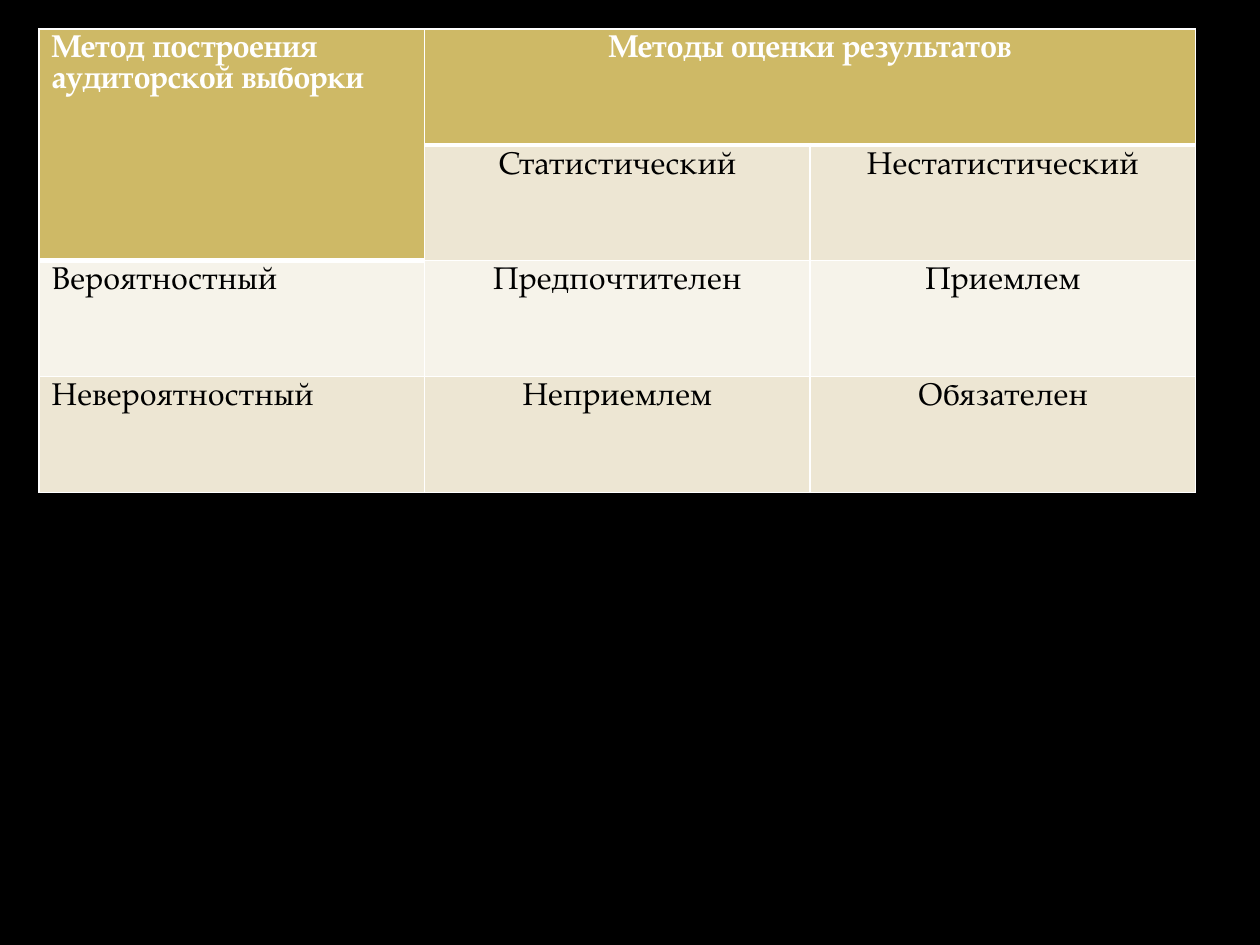
"""Build a slide with a table of audit sampling and evaluation methods."""
from lxml.etree import SubElement
from pptx import Presentation
from pptx.dml.color import RGBColor
from pptx.enum.text import PP_ALIGN as Align
from pptx.oxml.ns import qn
from pptx.util import Inches, Pt

FONT, SIZE = "TeX Gyre Pagella", 18
WHITE, BLACK, GOLD, SAND, CREAM = "FFFFFF", "000000", "CEB966", "EDE6D3", "F6F3EA"
ROWS = [
    ("Метод построения аудиторской выборки", "Методы оценки результатов", ""),
    ("", "Статистический", "Нестатистический"),
    ("Вероятностный", "Предпочтителен", "Приемлем"),
    ("Невероятностный", "Неприемлем", "Обязателен"),
]
ROW_FILLS = [GOLD, SAND, CREAM, SAND]
HEADER_CELLS = {(0, 0), (0, 1), (0, 2), (1, 0)}
THICK_BELOW = {(0, 1), (0, 2), (1, 0)}
LEFT, TOP, COL_W, ROW_H = 0.31, 0.23, 3.06, 0.92


def color(value):
    return RGBColor.from_string(value)


def paint(fill, value):
    fill.solid()
    fill.fore_color.rgb = color(value)


def add_borders(cell, widths):
    tc_pr = cell._tc.get_or_add_tcPr()
    for i, (side, width) in enumerate(widths.items()):
        ln = SubElement(tc_pr, qn(f"a:ln{side}"), w=str(Pt(width)))
        tc_pr.insert(i, ln)
        fill = SubElement(ln, qn("a:solidFill"))
        SubElement(fill, qn("a:srgbClr"), val=WHITE)


def fill_cell(cell, row, col, text):
    header = (row, col) in HEADER_CELLS
    paint(cell.fill, GOLD if header else ROW_FILLS[row])
    above = 3 if (row - 1, col) in THICK_BELOW else 1
    below = 3 if (row, col) in THICK_BELOW or cell.is_merge_origin else 1
    add_borders(cell, {"L": 1, "R": 1, "T": above, "B": below})
    if not text:
        return
    p = cell.text_frame.paragraphs[0]
    p.alignment = Align.CENTER if col else Align.LEFT
    r = p.add_run()
    r.text = text
    r.font.name, r.font.size, r.font.bold = FONT, Pt(SIZE), header
    r.font.color.rgb = color(WHITE if header else BLACK)


def main():
    prs = Presentation()
    prs.slide_width, prs.slide_height = Inches(10), Inches(7.5)
    s = prs.slides.add_slide(prs.slide_layouts[6])
    paint(s.background.fill, BLACK)

    n_rows, n_cols = len(ROWS), len(ROWS[0])
    table = s.shapes.add_table(
        n_rows, n_cols, Inches(LEFT), Inches(TOP),
        Inches(COL_W * n_cols), Inches(ROW_H * n_rows),
    ).table
    table.cell(0, 0).merge(table.cell(1, 0))
    table.cell(0, 1).merge(table.cell(0, 2))
    for row, texts in enumerate(ROWS):
        for col, text in enumerate(texts):
            fill_cell(table.cell(row, col), row, col, text)
    prs.save("out.pptx")


if __name__ == "__main__":
    main()
